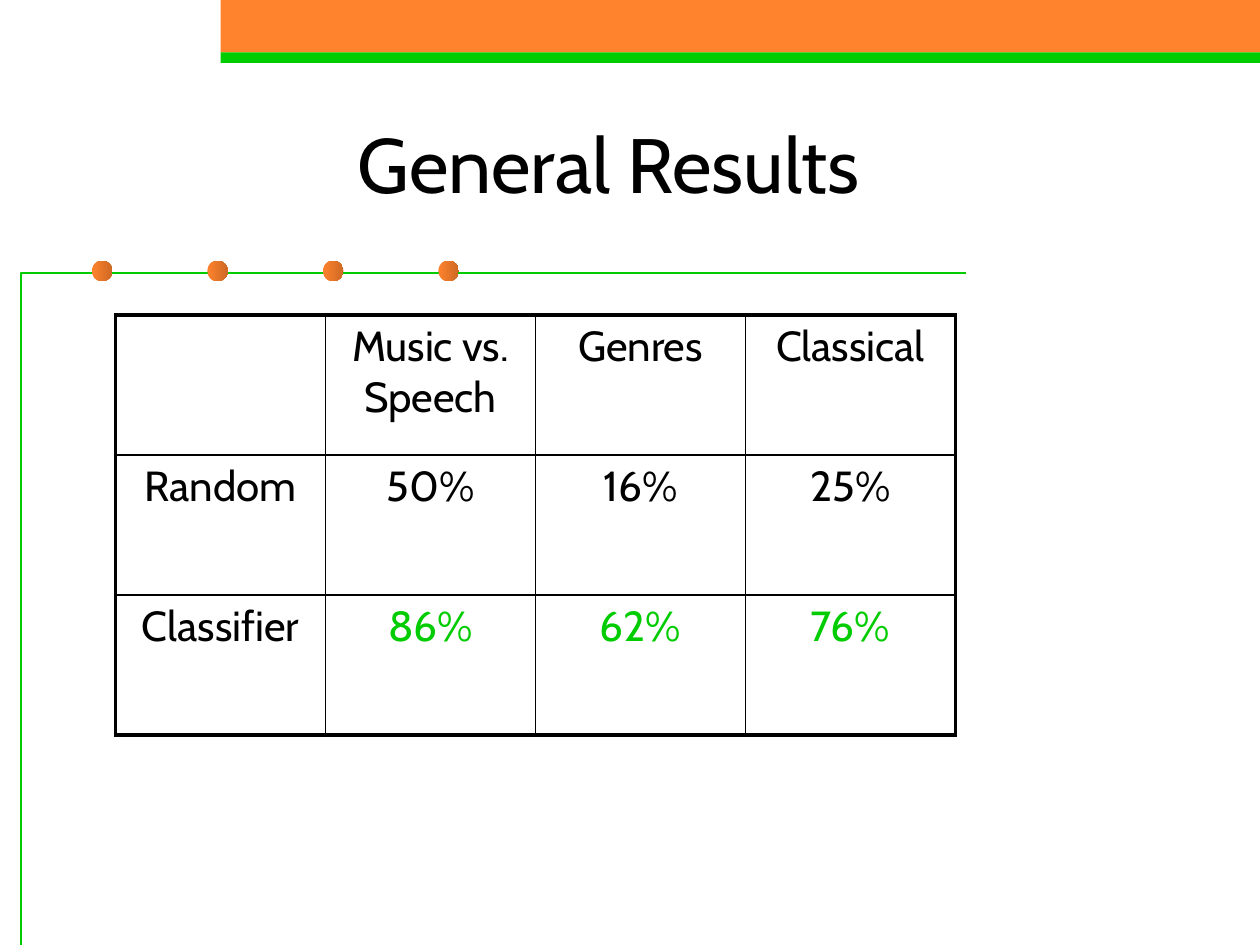
from dataclasses import dataclass

from lxml.etree import SubElement
from pptx import Presentation
from pptx.dml.color import RGBColor
from pptx.enum.shapes import MSO_SHAPE
from pptx.enum.text import MSO_ANCHOR, PP_ALIGN
from pptx.oxml.ns import qn
from pptx.util import Pt


@dataclass(frozen=True)
class Theme:
    font: str = "Cabin"
    title: float = 44
    body: float = 24
    ink: str = "000000"
    green: str = "00CC00"
    orange: str = "FF822D"
    rust: str = "CD6924"
    thin: float = 1
    thick: float = 2.25


THEME = Theme()
ROWS = [
    ["", "Music vs. Speech", "Genres", "Classical"],
    ["Random", "50%", "16%", "25%"],
    ["Classifier", "86%", "62%", "76%"],
]


def rgb(code):
    return RGBColor.from_string(code)


def write(frame, text, size=THEME.body, color=THEME.ink, align=PP_ALIGN.CENTER):
    frame.word_wrap = True
    para = frame.paragraphs[0]
    para.alignment = align
    para.font.size = Pt(size)
    if text:
        run = para.add_run()
        run.text = text
        run.font.name = THEME.font
        run.font.size = Pt(size)
        run.font.color.rgb = rgb(color)


def shape(slide, kind, box, color):
    item = slide.shapes.add_shape(kind, *map(Pt, box))
    item.shadow.inherit = False
    item.fill.solid()
    item.fill.fore_color.rgb = rgb(color)
    item.line.fill.background()
    return item


def banner(slide, box, strip=6):
    """Orange band whose lowest part is a green strip."""
    left, top, width, height = box
    band = height - strip
    shape(slide, MSO_SHAPE.RECTANGLE, (left, top, width, band), THEME.orange)
    shape(slide, MSO_SHAPE.RECTANGLE, (left, top + band, width, strip), THEME.green)


def frame(slide, box):
    """Green line up the left side and along the top, with four beads."""
    left, top, width, height = box
    path = slide.shapes.build_freeform(Pt(left), Pt(top + height))
    path.add_line_segments(
        [(Pt(left), Pt(top)), (Pt(left + width), Pt(top))], close=False)
    line = path.convert_to_shape()
    line.shadow.inherit = False
    line.fill.background()
    line.line.color.rgb = rgb(THEME.green)
    line.line.width = Pt(0.75)

    size, first, step = 11.7, 40.5, 66
    for i in range(4):
        spot = (left + first + i * step, top - 7, size, size)
        bead = shape(slide, MSO_SHAPE.OVAL, spot, THEME.orange)
        bead.fill.gradient()
        bead.fill.gradient_angle = 0
        for stop, color in zip(bead.fill.gradient_stops, (THEME.orange, THEME.rust)):
            stop.color.rgb = rgb(color)


def heading(slide, box, text):
    title = slide.shapes.title
    title.left, title.top, title.width, title.height = map(Pt, box)
    title.text_frame.vertical_anchor = MSO_ANCHOR.MIDDLE
    write(title.text_frame, text, size=THEME.title)


def edge(cell, side, width):
    line = SubElement(cell._tc.get_or_add_tcPr(), qn(f"a:ln{side}"), w=str(Pt(width)))
    fill = SubElement(line, qn("a:solidFill"))
    SubElement(fill, qn("a:srgbClr"), val=THEME.ink)


def results(slide, box, rows):
    """Grid of equal cells with a thick outer border."""
    high, wide = len(rows), len(rows[0])
    table = slide.shapes.add_table(high, wide, *map(Pt, box)).table
    table.first_row = table.horz_banding = False
    for r, row in enumerate(rows):
        for c, text in enumerate(row):
            cell = table.cell(r, c)
            outer = {"L": c == 0, "R": c == wide - 1, "T": r == 0, "B": r == high - 1}
            for side, thick in outer.items():
                edge(cell, side, THEME.thick if thick else THEME.thin)
            cell.fill.background()
            best = r == high - 1 and c > 0
            write(cell.text_frame, text, color=THEME.green if best else THEME.ink)


def main():
    deck = Presentation()
    deck.slide_width, deck.slide_height = Pt(720), Pt(540)
    slide = deck.slides.add_slide(deck.slide_layouts[5])
    banner(slide, (126, 0, 594, 36))
    frame(slide, (12, 156, 540, 384))
    heading(slide, (42, 48, 612, 90), "General Results")
    results(slide, (66, 180, 480, 240), ROWS)
    deck.save("out.pptx")


if __name__ == "__main__":
    main()
